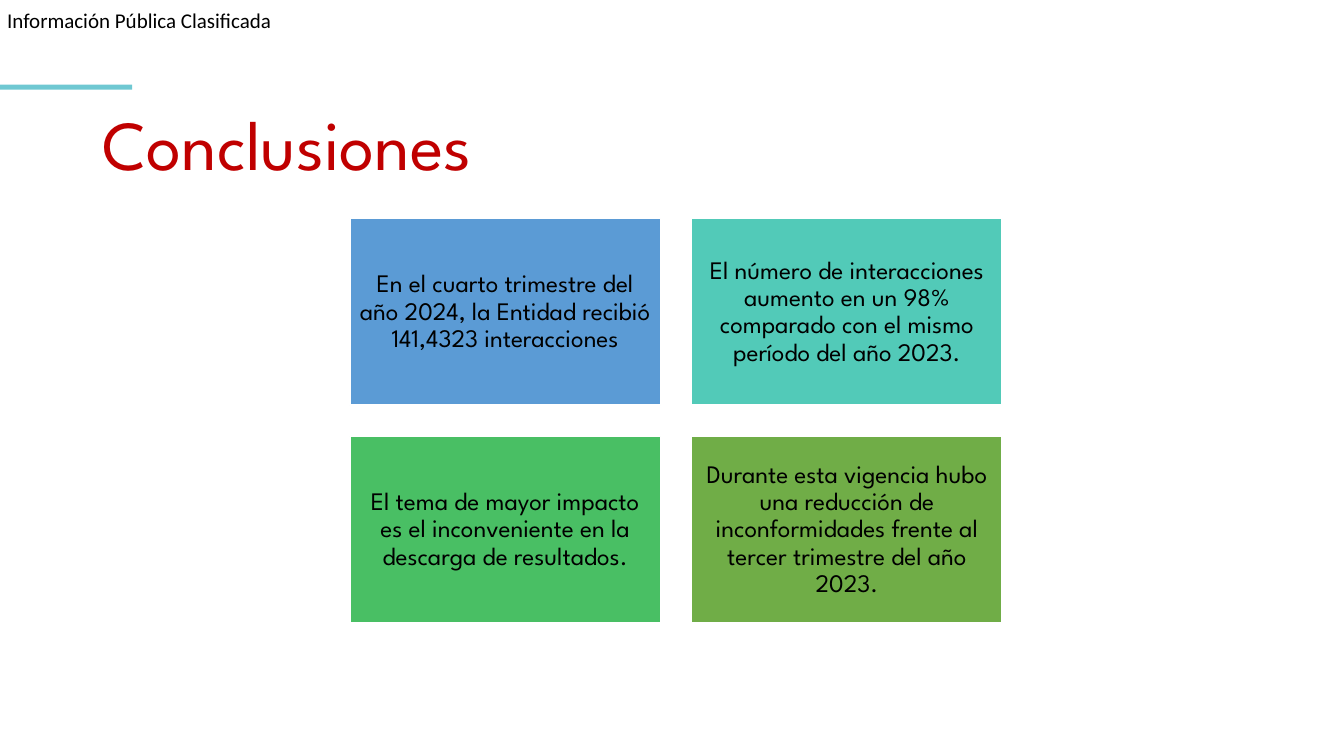
from dataclasses import dataclass

from pptx import Presentation
from pptx.dml.color import RGBColor
from pptx.enum.shapes import MSO_SHAPE
from pptx.enum.text import MSO_ANCHOR, MSO_AUTO_SIZE, PP_ALIGN
from pptx.shapes.autoshape import Shape
from pptx.slide import Slide
from pptx.util import Emu, Pt

EMU_PER_PX = 9144  # 100 px to the inch


@dataclass(frozen=True)
class Theme:
    text: str = "000000"
    title: str = "C00000"
    accent: str = "6FC8D2"
    outline: str = "FFFFFF"
    label_font: str = "Calibri"
    main_font: str = "League Spartan"
    label_size: int = 15
    title_size: int = 50
    card_size: int = 18


@dataclass(frozen=True)
class Box:
    left: int
    top: int
    width: int
    height: int

    def emu(self) -> tuple[Emu, ...]:
        return tuple(px(value) for value in (self.left, self.top, self.width, self.height))


@dataclass(frozen=True)
class Card:
    text: str
    fill: str


THEME = Theme()
LABEL_BOX = Box(7, 7, 268, 25)
ACCENT_BOX = Box(0, 84, 131, 5)
TITLE_BOX = Box(66, 95, 438, 94)
FIRST_CARD = Box(347, 217, 308, 185)
CARD_COLUMNS = 2
CARD_GAP = 31
CARD_INSET = 7

CARDS = (
    Card("En el cuarto trimestre del año 2024, la Entidad recibió 141,4323 interacciones", "5B9BD5"),
    Card("El número de interacciones aumento en un 98% comparado con el mismo período del año 2023.", "52CAB8"),
    Card("El tema de mayor impacto es el inconveniente en la descarga de resultados.", "49BF64"),
    Card("Durante esta vigencia hubo una reducción de inconformidades frente al tercer trimestre del año 2023.", "70AD47"),
)


def px(value: int) -> Emu:
    return Emu(value * EMU_PER_PX)


def set_attributes(target: object, values: dict[str, object]) -> None:
    for name, value in values.items():
        setattr(target, name, value)


def write_text(shape: Shape, text: str, font: str, size: int, color: str,
               align: PP_ALIGN, frame_format: dict[str, object]) -> None:
    frame = shape.text_frame
    frame.text = text
    set_attributes(frame, {"auto_size": MSO_AUTO_SIZE.NONE, **frame_format})
    paragraph = frame.paragraphs[0]
    paragraph.alignment = align
    run_font = paragraph.runs[0].font
    set_attributes(run_font, {"name": font, "size": Pt(size)})
    run_font.color.rgb = RGBColor.from_string(color)


def margins(inset: int) -> dict[str, object]:
    return {f"margin_{side}": px(inset) for side in ("left", "top", "right", "bottom")}


def add_rectangle(slide: Slide, box: Box, fill: str) -> Shape:
    shape = slide.shapes.add_shape(MSO_SHAPE.RECTANGLE, *box.emu())
    shape.shadow.inherit = False
    shape.fill.solid()
    shape.fill.fore_color.rgb = RGBColor.from_string(fill)
    shape.line.fill.background()
    return shape


def add_label(slide: Slide) -> None:
    label = slide.shapes.add_textbox(*LABEL_BOX.emu())
    write_text(label, "Información Pública Clasificada", THEME.label_font, THEME.label_size,
               THEME.text, PP_ALIGN.LEFT, {"word_wrap": False, **margins(0)})


def add_title(slide: Slide) -> None:
    title = slide.shapes.title
    set_attributes(title, dict(zip(("left", "top", "width", "height"), TITLE_BOX.emu())))
    write_text(title, "Conclusiones", THEME.main_font, THEME.title_size, THEME.title,
               PP_ALIGN.CENTER, {"word_wrap": False, "vertical_anchor": MSO_ANCHOR.TOP})


def add_card(slide: Slide, index: int, card: Card) -> None:
    row, column = divmod(index, CARD_COLUMNS)
    box = Box(FIRST_CARD.left + column * (FIRST_CARD.width + CARD_GAP),
              FIRST_CARD.top + row * (FIRST_CARD.height + CARD_GAP),
              FIRST_CARD.width, FIRST_CARD.height)
    shape = add_rectangle(slide, box, card.fill)
    shape.line.color.rgb = RGBColor.from_string(THEME.outline)
    shape.line.width = Pt(1)
    write_text(shape, card.text, THEME.main_font, THEME.card_size, THEME.text, PP_ALIGN.CENTER,
               {"word_wrap": True, "vertical_anchor": MSO_ANCHOR.MIDDLE, **margins(CARD_INSET)})
    shape.text_frame.paragraphs[0].line_spacing = 0.9


def main() -> None:
    presentation = Presentation()
    set_attributes(presentation, {"slide_width": px(1333), "slide_height": px(750)})
    slide = presentation.slides.add_slide(presentation.slide_layouts.get_by_name("Title Only"))

    # Heading area
    add_label(slide)
    add_rectangle(slide, ACCENT_BOX, THEME.accent)
    add_title(slide)

    # Grid of conclusions
    for index, card in enumerate(CARDS):
        add_card(slide, index, card)

    presentation.save("out.pptx")


if __name__ == "__main__":
    main()
